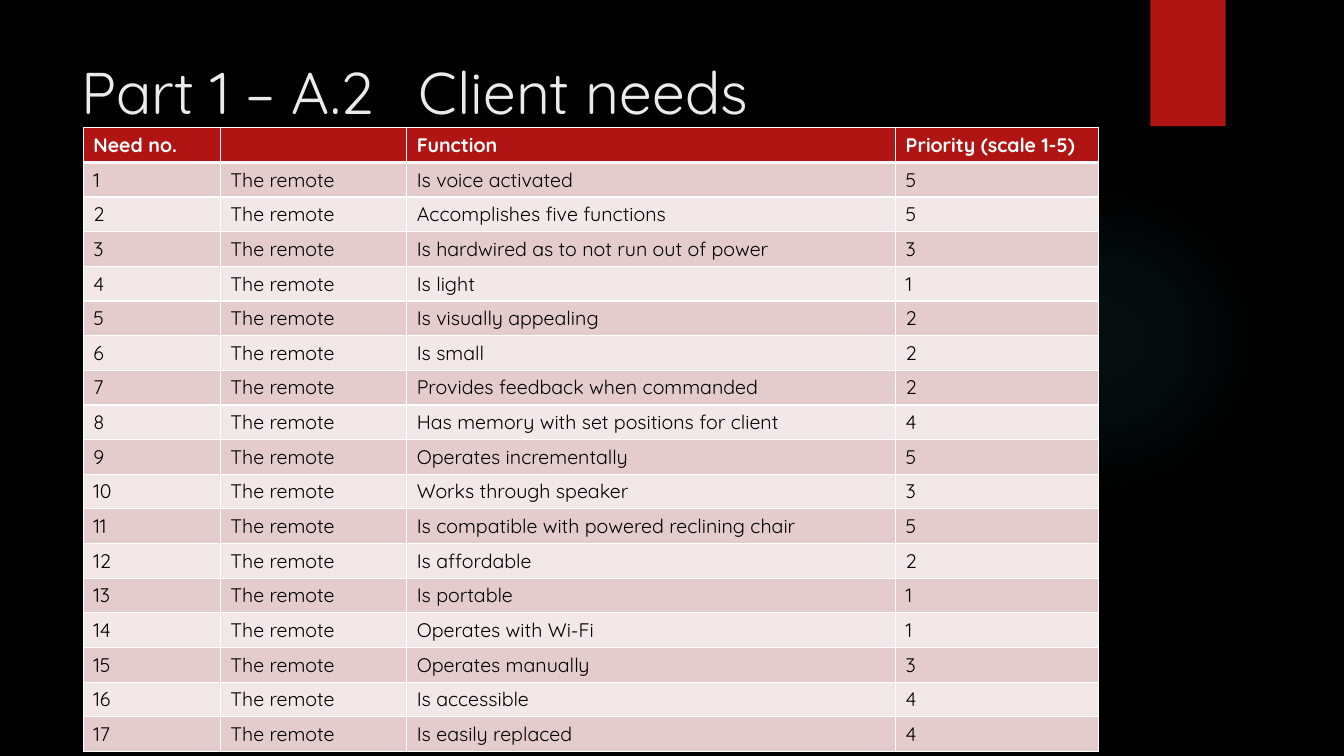
"""Build the client needs slide with its prioritised table of functions."""
from lxml.etree import SubElement
from pptx import Presentation
from pptx.dml.color import RGBColor
from pptx.enum.shapes import MSO_SHAPE
from pptx.enum.text import MSO_ANCHOR, MSO_AUTO_SIZE, PP_ALIGN
from pptx.oxml.ns import qn
from pptx.util import Cm, Pt

TITLE = "Part 1 – A.2\tClient needs"
HEADINGS = ("Need no.", "", "Function", "Priority (scale 1-5)")
SUBJECT = "The remote"
NEEDS = [
    ("Is voice activated", 5),
    ("Accomplishes five functions", 5),
    ("Is hardwired as to not run out of power", 3),
    ("Is light", 1),
    ("Is visually appealing", 2),
    ("Is small", 2),
    ("Provides feedback when commanded", 2),
    ("Has memory with set positions for client", 4),
    ("Operates incrementally", 5),
    ("Works through speaker", 3),
    ("Is compatible with powered reclining chair", 5),
    ("Is affordable", 2),
    ("Is portable", 1),
    ("Operates with Wi-Fi", 1),
    ("Operates manually", 3),
    ("Is accessible", 4),
    ("Is easily replaced", 4),
]
COLORS = {
    "background": "000000",
    "accent": "B01513",
    "title": "EBEBEB",
    "heading": "FFFFFF",
    "body": "000000",
    "border": "FFFFFF",
    "odd": "E4CCCC",
    "even": "F2E8E7",
    "glow": "50B9C1",
}
GLOW_STOPS = ((0, 7), (36, 6), (69, 0))
FONT = "Quicksand"
COLUMN_WIDTHS = (3.45, 4.7, 12.32, 5.11)
ROW_HEIGHT = 0.87
TABLE_SIZE = 14


def rgb(name):
    """Return the named palette colour."""
    return RGBColor.from_string(COLORS[name])


def style_font(paragraph, size, color, bold=False):
    """Set the typeface of a whole paragraph."""
    font = paragraph.font
    font.name, font.size, font.bold = FONT, Pt(size), bold
    font.color.rgb = rgb(color)


def add_decor(slide, preset, left, top, width, height):
    """Add an accent-filled shape without line or shadow."""
    decor = slide.shapes.add_shape(preset, Cm(left), Cm(top), Cm(width), Cm(height))
    decor.shadow.inherit = False
    decor.fill.solid()
    decor.fill.fore_color.rgb = rgb("accent")
    decor.line.fill.background()
    return decor


def fill_with_glow(shape):
    """Give a shape a fading radial fill."""
    properties = shape._element.spPr
    solid = properties.find(qn("a:solidFill"))
    gradient = SubElement(properties, qn("a:gradFill"), rotWithShape="1")
    stops = SubElement(gradient, qn("a:gsLst"))
    for position, opacity in GLOW_STOPS:
        stop = SubElement(stops, qn("a:gs"), pos=str(position * 1000))
        color = SubElement(stop, qn("a:srgbClr"), val=COLORS["glow"])
        SubElement(color, qn("a:alpha"), val=str(opacity * 1000))
    circle = SubElement(gradient, qn("a:path"), path="circle")
    SubElement(circle, qn("a:fillToRect"), l="50000", t="50000", r="50000", b="50000")
    properties.replace(solid, gradient)


def add_border(cell, side, width):
    """Draw one edge of a cell; call before filling it."""
    edge = SubElement(cell._tc.get_or_add_tcPr(), qn(f"a:ln{side}"), w=str(Pt(width)))
    SubElement(SubElement(edge, qn("a:solidFill")), qn("a:srgbClr"), val=COLORS["border"])


def write_cell(cell, entry, row):
    """Write and format one table cell."""
    heading = row == 0
    for side in "LRTB" if heading else "LRB":
        add_border(cell, side, 3 if heading and side == "B" else 1)
    cell.fill.solid()
    cell.fill.fore_color.rgb = rgb("accent" if heading else "odd" if row % 2 else "even")
    cell.text = str(entry)
    paragraph = cell.text_frame.paragraphs[0]
    style_font(paragraph, TABLE_SIZE, "heading" if heading else "body", heading)
    if not entry:
        SubElement(paragraph._p, qn("a:endParaRPr"), sz=str(TABLE_SIZE * 100))


def add_needs_table(slide):
    """Add the table of needs, numbered in order."""
    rows = [HEADINGS] + [
        (number, SUBJECT, function, priority)
        for number, (function, priority) in enumerate(NEEDS, 1)
    ]
    needs = slide.shapes.add_table(
        len(rows), len(HEADINGS), Cm(2.1), Cm(3.22),
        Cm(sum(COLUMN_WIDTHS)), Cm(ROW_HEIGHT * len(rows)),
    ).table
    for column, width in zip(needs.columns, COLUMN_WIDTHS):
        column.width = Cm(width)
    for row, entries in enumerate(rows):
        needs.rows[row].height = Cm(ROW_HEIGHT)
        for column, entry in enumerate(entries):
            write_cell(needs.cell(row, column), entry, row)


def format_title(title):
    """Place the title and set the gap before its second part."""
    title.left, title.top, title.width, title.height = Cm(1.8), Cm(1.27), Cm(26.14), Cm(3.89)
    frame = title.text_frame
    frame.text = TITLE
    frame.word_wrap = True
    frame.auto_size = MSO_AUTO_SIZE.NONE
    frame.vertical_anchor = MSO_ANCHOR.TOP
    heading = frame.paragraphs[0]
    heading.alignment = PP_ALIGN.LEFT
    tabs = SubElement(heading._p.get_or_add_pPr(), qn("a:tabLst"))
    SubElement(tabs, qn("a:tab"), pos=str(Cm(8.5)), algn="l")
    style_font(heading, 42, "title")


def main():
    """Assemble and save the slide."""
    deck = Presentation()
    deck.slide_width, deck.slide_height = Cm(33.87), Cm(19.05)
    slide = deck.slides.add_slide(deck.slide_layouts[5])
    slide.background.fill.solid()
    slide.background.fill.fore_color.rgb = rgb("background")
    fill_with_glow(add_decor(slide, MSO_SHAPE.OVAL, 23.9, 4.65, 7.82, 7.82))
    add_decor(slide, MSO_SHAPE.RECTANGLE, 28.99, 0, 1.9, 3.18)
    format_title(slide.shapes.title)
    add_needs_table(slide)
    deck.save("out.pptx")


if __name__ == "__main__":
    main()
